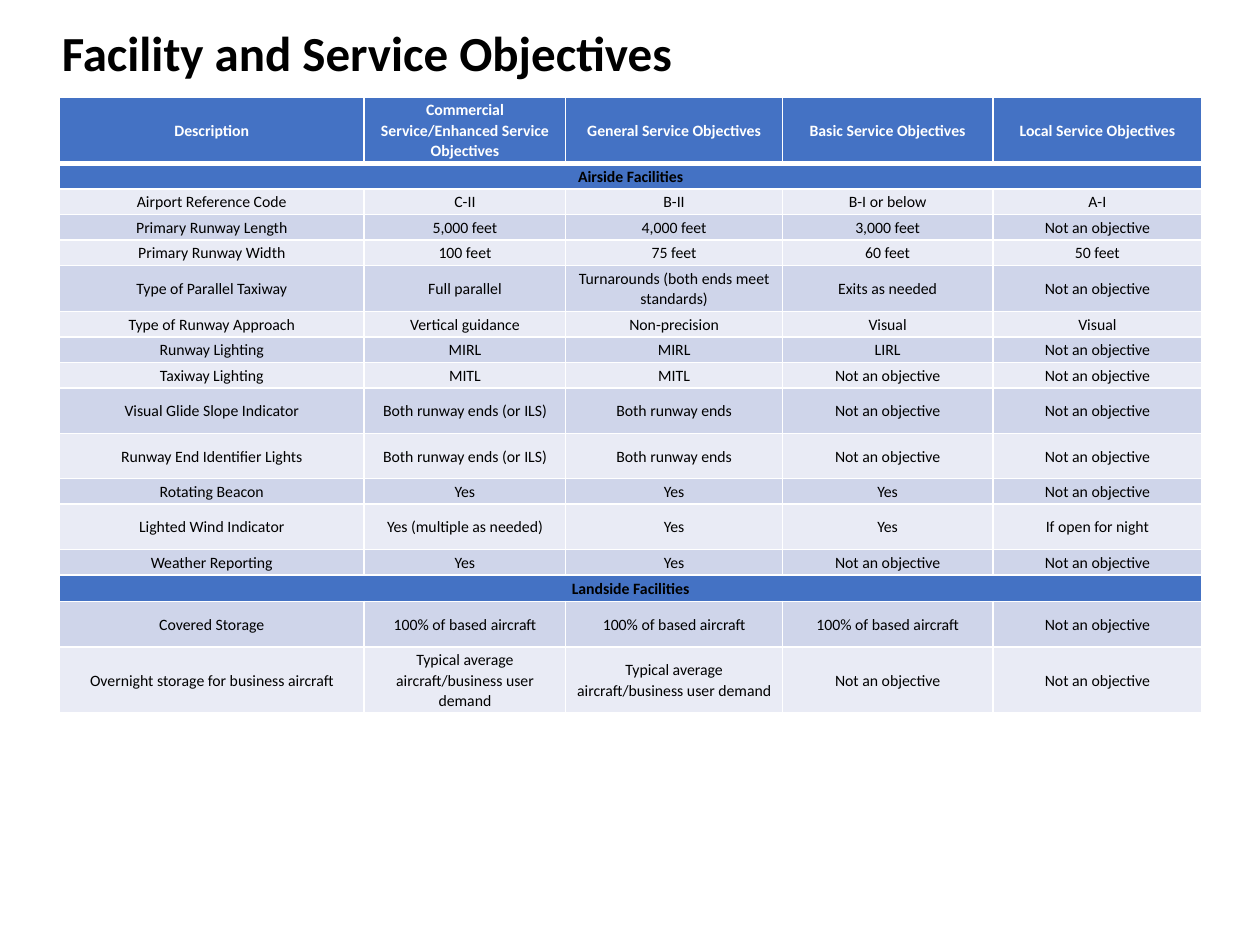
import pptx
import pptx.dml.color
import pptx.enum.text
import pptx.oxml.ns
import pptx.util
from lxml import etree

Inches = pptx.util.Inches
Pt = pptx.util.Pt

FONT = "Calibri"
HEADER_FILL = "4472C4"
BAND_FILLS = ("E9EBF5", "CFD5EA")
NONE = "Not an objective"
DEMAND = "Typical average aircraft/business user demand"
BASED = "100% of based aircraft"
ENDS = "Both runway ends"

COLUMN_WIDTHS = (2.42, 1.6, 1.72, 1.67, 1.66)
ONE_LINE, TWO_LINES, THREE_LINES = 0.2, 0.36, 0.52

# Each row: height, then its texts; a single text is a section heading.
OBJECTIVES = [
    (THREE_LINES, "Description", "Commercial Service/Enhanced Service Objectives",
     "General Service Objectives", "Basic Service Objectives", "Local Service Objectives"),
    (ONE_LINE, "Airside Facilities"),
    (ONE_LINE, "Airport Reference Code", "C-II", "B-II", "B-I or below", "A-I"),
    (ONE_LINE, "Primary Runway Length", "5,000 feet", "4,000 feet", "3,000 feet", NONE),
    (ONE_LINE, "Primary Runway Width", "100 feet", "75 feet", "60 feet", "50 feet"),
    (TWO_LINES, "Type of Parallel Taxiway", "Full parallel",
     "Turnarounds (both ends meet standards)", "Exits as needed", NONE),
    (ONE_LINE, "Type of Runway Approach", "Vertical guidance", "Non-precision",
     "Visual", "Visual"),
    (ONE_LINE, "Runway Lighting", "MIRL", "MIRL", "LIRL", NONE),
    (ONE_LINE, "Taxiway Lighting", "MITL", "MITL", NONE, NONE),
    (TWO_LINES, "Visual Glide Slope Indicator", ENDS + " (or ILS)", ENDS, NONE, NONE),
    (TWO_LINES, "Runway End Identifier Lights", ENDS + " (or ILS)", ENDS, NONE, NONE),
    (ONE_LINE, "Rotating Beacon", "Yes", "Yes", "Yes", NONE),
    (TWO_LINES, "Lighted Wind Indicator", "Yes (multiple as needed)", "Yes", "Yes",
     "If open for night"),
    (ONE_LINE, "Weather Reporting", "Yes", "Yes", NONE, NONE),
    (0.21, "Landside Facilities"),
    (TWO_LINES, "Covered Storage", BASED, BASED, BASED, NONE),
    (THREE_LINES, "Overnight storage for business aircraft", DEMAND, DEMAND, NONE, NONE),
]


def rgb(color):
    return pptx.dml.color.RGBColor.from_string(color)


def format_font(paragraph, size, color, bold):
    font = paragraph.font
    font.name = FONT
    font.size = Pt(size)
    font.bold = bold
    font.color.rgb = rgb(color)


def add_borders(cell, top, bottom):
    """Draw white cell borders; top and bottom are widths in points."""
    properties = cell._tc.get_or_add_tcPr()
    for side, width in (("L", 1), ("R", 1), ("T", top), ("B", bottom)):
        line = etree.SubElement(properties, pptx.oxml.ns.qn("a:ln" + side), w=str(Pt(width)))
        fill = etree.SubElement(line, pptx.oxml.ns.qn("a:solidFill"))
        etree.SubElement(fill, pptx.oxml.ns.qn("a:srgbClr"), val="FFFFFF")


def format_cell(cell, fill, top, bottom):
    add_borders(cell, top, bottom)
    cell.fill.solid()
    cell.fill.fore_color.rgb = rgb(fill)
    cell.margin_left = cell.margin_right = Inches(0.04)
    cell.margin_top = cell.margin_bottom = Inches(0.02)
    cell.vertical_anchor = pptx.enum.text.MSO_ANCHOR.MIDDLE


def write_cell(cell, text, color, bold, space_after):
    cell.text = text
    paragraph = cell.text_frame.paragraphs[0]
    paragraph.alignment = pptx.enum.text.PP_ALIGN.CENTER
    paragraph.line_spacing = 1.07
    paragraph.space_after = Pt(space_after)
    format_font(paragraph, 9, color, bold)


def place_title(slide, left, top, width, height):
    title = slide.shapes.title
    title.left, title.top, title.width, title.height = map(Inches, (left, top, width, height))
    frame = title.text_frame
    frame.text = "Facility and Service Objectives"
    frame.word_wrap = True
    frame.vertical_anchor = pptx.enum.text.MSO_ANCHOR.MIDDLE
    paragraph = frame.paragraphs[0]
    paragraph.alignment = pptx.enum.text.PP_ALIGN.LEFT
    paragraph.line_spacing = 0.9
    format_font(paragraph, 28, "000000", True)


def add_objectives_table(slide, left, top, width, height):
    columns = len(COLUMN_WIDTHS)
    table = slide.shapes.add_table(
        len(OBJECTIVES), columns, *map(Inches, (left, top, width, height))).table
    for column, column_width in zip(table.columns, COLUMN_WIDTHS):
        column.width = Inches(column_width)

    for index, (row_height, *texts) in enumerate(OBJECTIVES):
        table.rows[index].height = Inches(row_height)
        is_header = index == 0
        is_section = len(texts) == 1
        fill = HEADER_FILL if is_header or is_section else BAND_FILLS[index % 2]
        for column in range(columns):
            format_cell(table.cell(index, column), fill,
                        top=3 if index == 1 else 1, bottom=3 if is_header else 1)
        if is_section:
            table.cell(index, 0).merge(table.cell(index, columns - 1))
        for column, text in enumerate(texts):
            write_cell(table.cell(index, column), text,
                       color="FFFFFF" if is_header else "000000",
                       bold=is_header or is_section,
                       space_after=0 if is_header else 10)


def main():
    presentation = pptx.Presentation()
    presentation.slide_width = Inches(10)
    presentation.slide_height = Inches(7.5)
    slide = presentation.slides.add_slide(presentation.slide_layouts[5])
    place_title(slide, 0.39, 0.12, 8.62, 0.65)
    add_objectives_table(slide, 0.47, 0.77, 9.07, 4.84)
    presentation.save("out.pptx")


if __name__ == "__main__":
    main()
